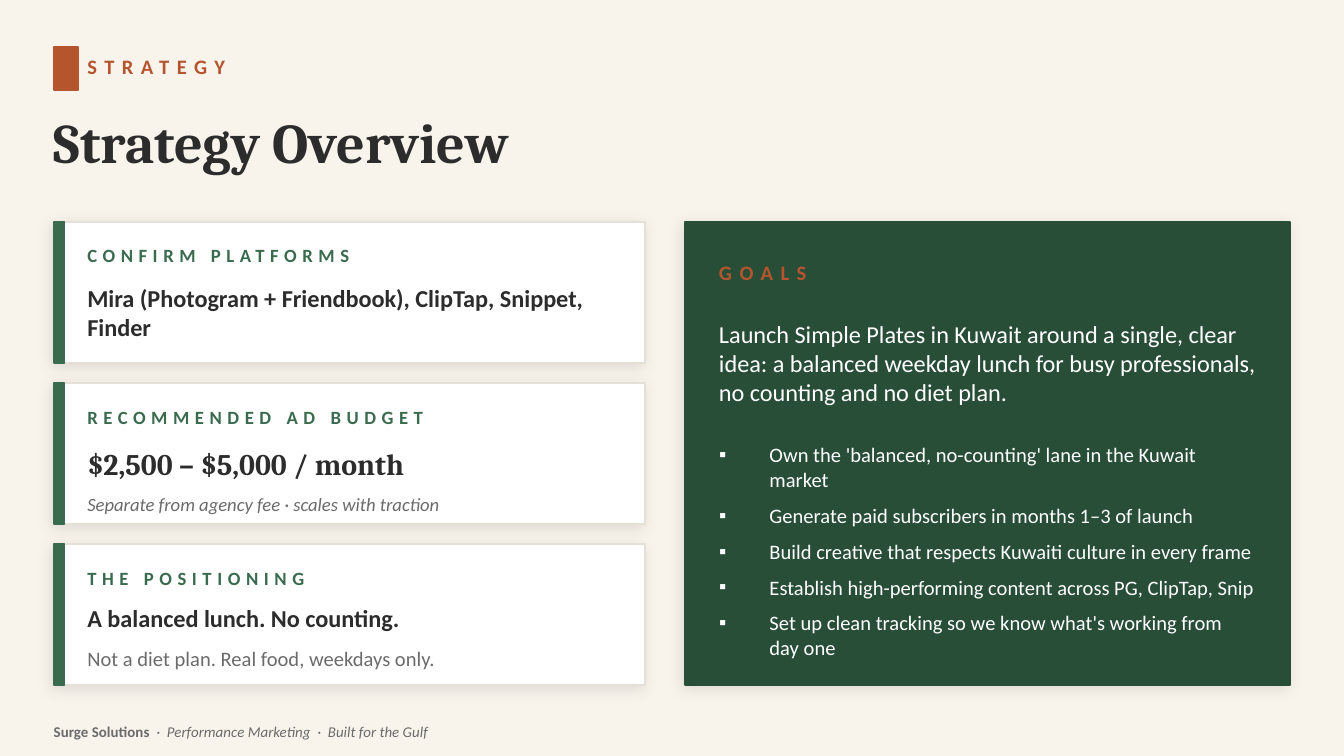
from lxml import etree
from pptx import Presentation
from pptx.dml.color import RGBColor
from pptx.enum import shapes, text
from pptx.oxml import ns
from pptx.util import Inches, Pt

COLORS = {
    "cream": "F8F4EC", "rust": "B5552E", "ink": "2C2C2C", "white": "FFFFFF",
    "border": "E5E0D5", "green": "3A6B4E", "forest": "284E38", "gray": "6B6B6B",
}
MARGIN, INDENT = 0.4, 0.65
CONTENT_WIDTH = 10 - 2 * MARGIN
TEXT_WIDTH = 4
CARD_TOP, CARD_WIDTH, CARD_HEIGHT, CARD_GAP = 1.65, 4.4, 1.05, 0.15
CARD_PITCH = CARD_HEIGHT + CARD_GAP
PANEL_LEFT, PANEL_WIDTH = 5.1, 4.5
PANEL_HEIGHT = 3 * CARD_HEIGHT + 2 * CARD_GAP
PANEL_INDENT = PANEL_LEFT + 0.25

presentation = Presentation()
presentation.slide_width = Inches(10)
presentation.slide_height = Inches(10 * 9 / 16)
slide = presentation.slides.add_slide(presentation.slide_layouts[1])
slide.background.fill.solid()
slide.background.fill.fore_color.rgb = RGBColor.from_string(COLORS["cream"])


def add_box(left, top, width, height, fill, line, shadow=False):
    shape = slide.shapes.add_shape(
        shapes.MSO_SHAPE.RECTANGLE, Inches(left), Inches(top), Inches(width), Inches(height))
    shape.fill.solid()
    shape.fill.fore_color.rgb = RGBColor.from_string(COLORS[fill])
    shape.line.color.rgb = RGBColor.from_string(COLORS[line])
    shape.line.width = Pt(1)
    shape.shadow.inherit = False
    if shadow:
        effects = shape.element.spPr.find(ns.qn("a:effectLst"))
        outer = etree.SubElement(effects, ns.qn("a:outerShdw"), blurRad=str(Pt(8)),
                                 dist=str(Pt(2)), dir=str(135 * 60000), rotWithShape="0")
        color = etree.SubElement(outer, ns.qn("a:srgbClr"), val="000000")
        etree.SubElement(color, ns.qn("a:alpha"), val="10000")


def write(left, top, width, height, paragraphs, size, color, style="", font="Calibri",
          spacing=0, shape=None, bullet=None):
    shape = shape or slide.shapes.add_textbox(0, 0, 0, 0)
    shape.left, shape.top = Inches(left), Inches(top)
    shape.width, shape.height = Inches(width), Inches(height)
    frame = shape.text_frame
    frame.word_wrap = True
    frame.auto_size = text.MSO_AUTO_SIZE.NONE
    frame.vertical_anchor = text.MSO_ANCHOR.MIDDLE
    frame.margin_left = frame.margin_top = frame.margin_right = frame.margin_bottom = 0
    for number, content in enumerate(paragraphs):
        paragraph = frame.add_paragraph() if number else frame.paragraphs[0]
        if bullet:
            properties = paragraph._p.get_or_add_pPr()
            properties.set("marL", str(Pt(27)))
            properties.set("indent", str(-Pt(27)))
            etree.SubElement(properties, ns.qn("a:buChar"), char=bullet)
            paragraph.space_after = Pt(6)
        paragraph.alignment = text.PP_ALIGN.LEFT
        paragraph.space_before = Pt(0)
        runs = [(content, style)] if isinstance(content, str) else content
        for words, run_style in runs:
            run = paragraph.add_run()
            run.text = words
            run.font.name = font
            run.font.size = Pt(size)
            run.font.bold = run_style == "bold"
            run.font.italic = run_style == "italic"
            run.font.color.rgb = RGBColor.from_string(COLORS[color])
            if spacing:
                run.font._element.set("spc", str(spacing * 100))


add_box(MARGIN, 0.35, 0.18, 0.32, "rust", "rust")
write(INDENT, 0.32, TEXT_WIDTH, 0.35, ["STRATEGY"], 11, "rust", "bold", spacing=4)
write(MARGIN, 0.7, CONTENT_WIDTH, 0.7, ["Strategy Overview"], 30, "ink", "bold", "Cambria",
      shape=slide.shapes.title)

cards = [
    ("CONFIRM PLATFORMS", [
        (0.4, 0.55, "Mira (Photogram + Friendbook), ClipTap, Snippet, Finder", 13, "ink", "bold", "Calibri")]),
    ("RECOMMENDED AD BUDGET", [
        (0.4, 0.4, "$2,500 – $5,000 / month", 16, "ink", "bold", "Cambria"),
        (0.75, 0.3, "Separate from agency fee · scales with traction", 10, "gray", "italic", "Calibri")]),
    ("THE POSITIONING", [
        (0.4, 0.3, "A balanced lunch. No counting.", 13, "ink", "bold", "Calibri"),
        (0.7, 0.3, "Not a diet plan. Real food, weekdays only.", 11, "gray", "", "Calibri")]),
]
for row, (heading, lines) in enumerate(cards):
    top = CARD_TOP + row * CARD_PITCH
    add_box(MARGIN, top, CARD_WIDTH, CARD_HEIGHT, "white", "border", shadow=True)
    add_box(MARGIN, top, 0.08, CARD_HEIGHT, "green", "green")
    write(INDENT, top + 0.1, TEXT_WIDTH, 0.3, [heading], 10, "green", "bold", spacing=3)
    for offset, height, words, size, color, style, font in lines:
        write(INDENT, top + offset, TEXT_WIDTH, height, [words], size, color, style, font)

add_box(PANEL_LEFT, CARD_TOP, PANEL_WIDTH, PANEL_HEIGHT, "forest", "forest", shadow=True)
write(PANEL_INDENT, 1.85, TEXT_WIDTH, 0.35, ["GOALS"], 11, "rust", "bold", spacing=4)
write(PANEL_INDENT, 2.2, TEXT_WIDTH, 1, [
    "Launch Simple Plates in Kuwait around a single, clear idea: a balanced weekday lunch "
    "for busy professionals, no counting and no diet plan."], 13, "white")

goals = slide.placeholders[1]
goals.element.getparent().append(goals.element)
write(PANEL_INDENT, 3.25, TEXT_WIDTH, 1.7, [
    "Own the 'balanced, no-counting' lane in the Kuwait market",
    "Generate paid subscribers in months 1–3 of launch",
    "Build creative that respects Kuwaiti culture in every frame",
    "Establish high-performing content across PG, ClipTap, Snip",
    "Set up clean tracking so we know what's working from day one",
], 11, "white", shape=goals, bullet="▪")

write(MARGIN, 5.32, CONTENT_WIDTH, 0.25, [[
    ("Surge Solutions", "bold"),
    ("  ·  Performance Marketing  ·  Built for the Gulf", "italic"),
]], 8, "gray")

presentation.save("out.pptx")
